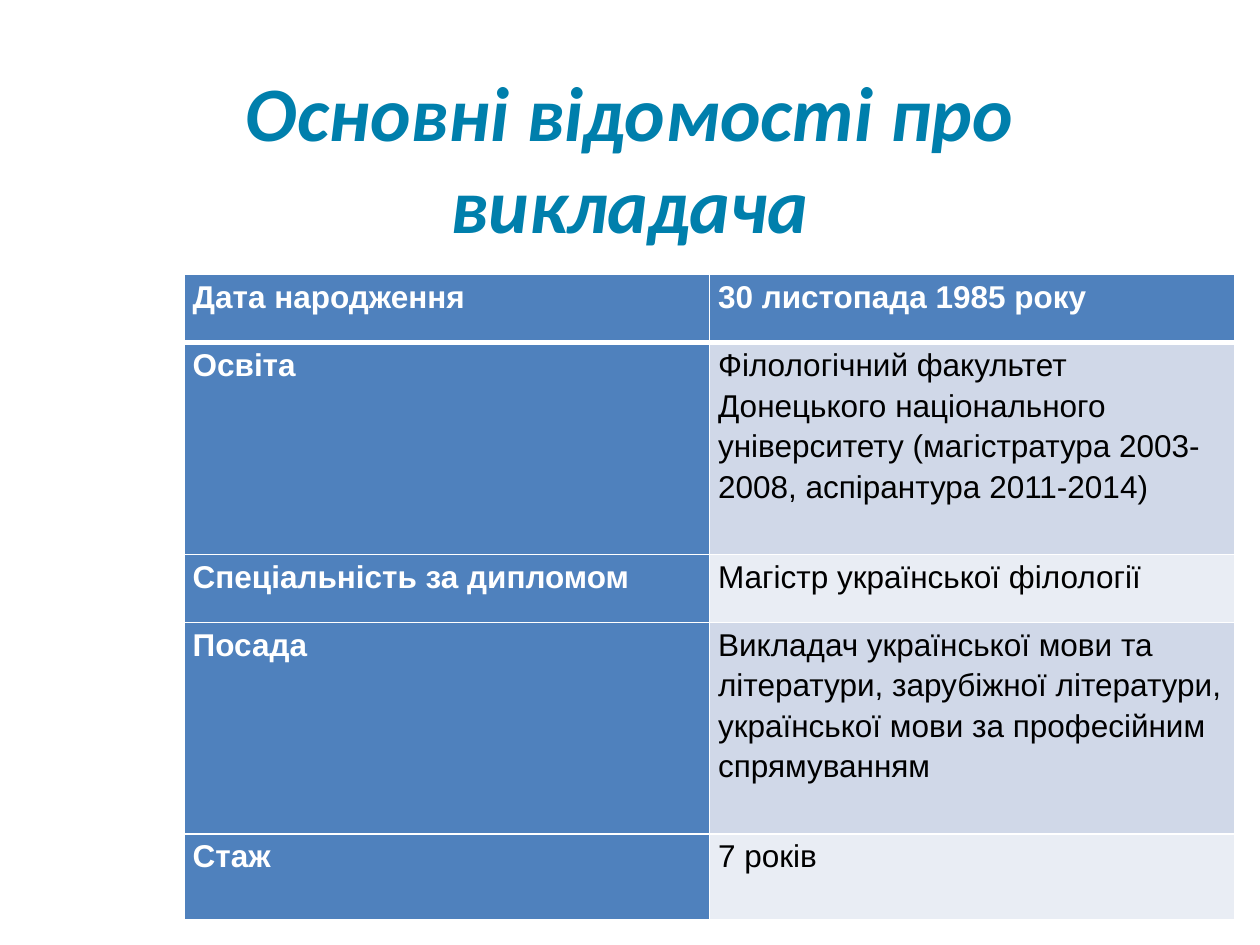
import pptx
import pptx.dml.color
import pptx.enum.text
import pptx.oxml
import pptx.oxml.ns
import pptx.util

COLORS = {
    "title": "007FAC",
    "label": "4F81BD",
    "odd": "D0D8E8",
    "even": "E9EDF4",
    "white": "FFFFFF",
    "black": "000000",
}
FACTS = [
    ("Дата народження", "30 листопада 1985 року", 0.54),
    ("Освіта", "Філологічний факультет Донецького національного університету "
               "(магістратура 2003-2008, аспірантура 2011-2014)", 1.68),
    ("Спеціальність за дипломом", "Магістр української філології", 0.54),
    ("Посада", "Викладач української мови та літератури, зарубіжної літератури, "
               "української мови за професійним спрямуванням", 1.68),
    ("Стаж", "7 років", 0.68),
]
COLUMN_WIDTH = 4.17


def rgb(name):
    return pptx.dml.color.RGBColor.from_string(COLORS[name])


def add_border(cell, side, points):
    """Draw a white line on one side (L, R, T or B); call before filling the cell."""
    cell._tc.get_or_add_tcPr().append(pptx.oxml.parse_xml(
        f'<a:ln{side} {pptx.oxml.ns.nsdecls("a")} w="{pptx.util.Pt(points)}">'
        f'<a:solidFill><a:srgbClr val="{COLORS["white"]}"/></a:solidFill></a:ln{side}>'))


deck = pptx.Presentation()
deck.slide_width = pptx.util.Inches(10)
deck.slide_height = pptx.util.Inches(7.5)
slide = deck.slides.add_slide(deck.slide_layouts[0])
subtitle = slide.placeholders[1]
subtitle.element.getparent().remove(subtitle.element)

heading = slide.shapes.title
heading.left, heading.top = pptx.util.Inches(1.14), pptx.util.Inches(0.44)
heading.width, heading.height = pptx.util.Inches(7.72), pptx.util.Inches(1.61)
heading.text_frame.text = "Основні відомості про викладача"
heading.text_frame.vertical_anchor = pptx.enum.text.MSO_ANCHOR.MIDDLE
heading_line = heading.text_frame.paragraphs[0]
heading_line.alignment = pptx.enum.text.PP_ALIGN.CENTER
heading_line.font.name = "Calibri"
heading_line.font.size = pptx.util.Pt(44)
heading_line.font.bold = heading_line.font.italic = True
heading_line.font.color.rgb = rgb("title")

facts_table = slide.shapes.add_table(
    len(FACTS), 2, pptx.util.Inches(1.46), pptx.util.Inches(2.18),
    pptx.util.Inches(2 * COLUMN_WIDTH),
    pptx.util.Inches(sum(height for _, _, height in FACTS))).table

for row, (label, detail, height) in enumerate(FACTS):
    facts_table.rows[row].height = pptx.util.Inches(height)
    for column, wording in enumerate((label, detail)):
        cell = facts_table.cell(row, column)
        is_heading = row == 0 or column == 0
        for side in "LRTB":
            under_header = (row, side) in ((0, "B"), (1, "T"))
            add_border(cell, side, 3 if under_header else 1)
        cell.fill.solid()
        cell.fill.fore_color.rgb = rgb(
            "label" if is_heading else "odd" if row % 2 else "even")
        cell.margin_left = cell.margin_right = pptx.util.Inches(0.07)
        cell.margin_top = cell.margin_bottom = 0
        cell.text = wording
        paragraph = cell.text_frame.paragraphs[0]
        paragraph.line_spacing = 1.15
        paragraph.font.name = "Arial"
        paragraph.font.size = pptx.util.Pt(18)
        paragraph.font.bold = is_heading
        paragraph.font.color.rgb = rgb("white" if is_heading else "black")

deck.save("out.pptx")
